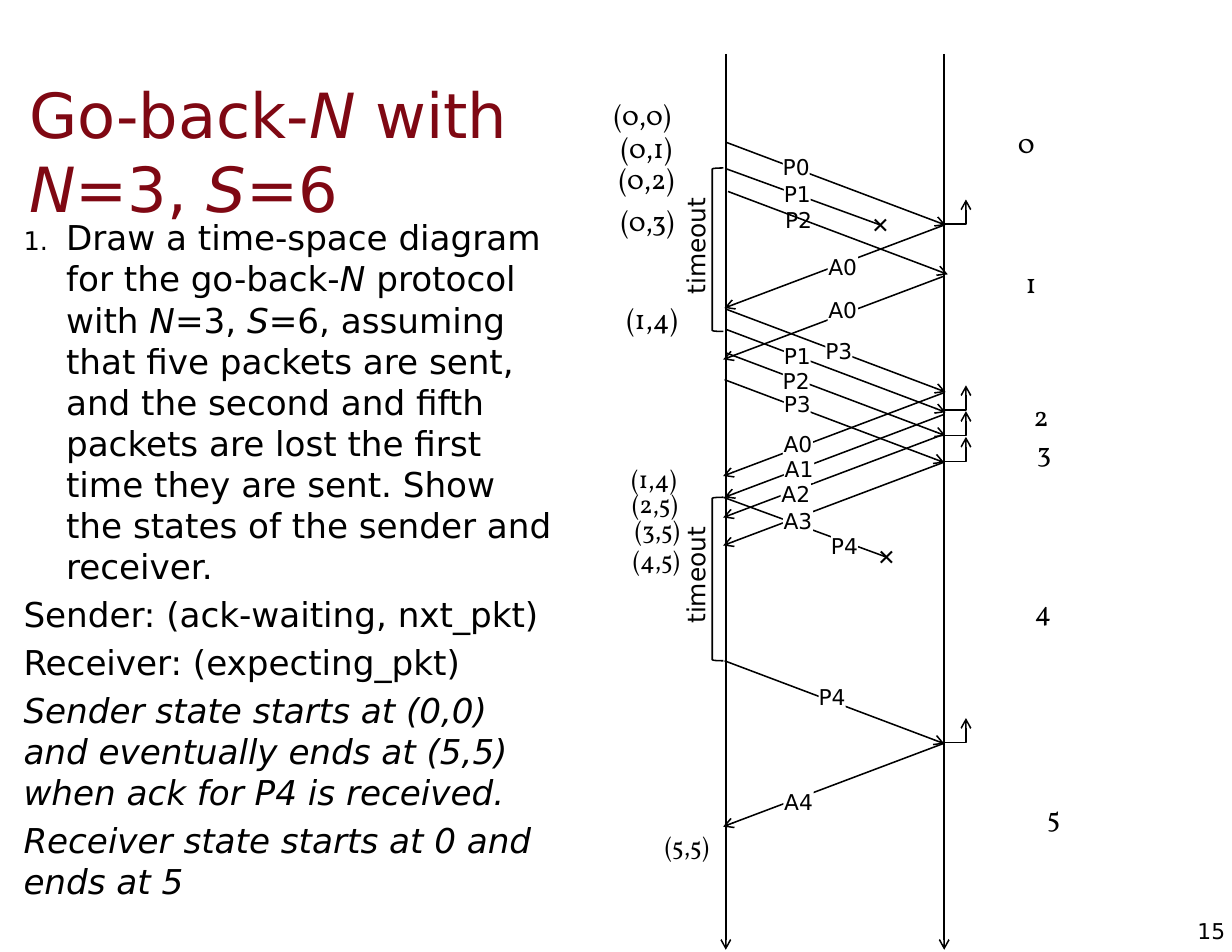
"""Build the go-back-N time-space diagram slide."""
from pptx import Presentation
from pptx.dml.color import RGBColor
from pptx.enum.shapes import MSO_CONNECTOR, MSO_SHAPE
from pptx.enum.text import MSO_ANCHOR, MSO_AUTO_SIZE, PP_ALIGN
from pptx.oxml.ns import qn
from pptx.util import Pt
from lxml import etree

LEFT, CENTER, RIGHT = PP_ALIGN.LEFT, PP_ALIGN.CENTER, PP_ALIGN.RIGHT
TOP, MIDDLE = MSO_ANCHOR.TOP, MSO_ANCHOR.MIDDLE
NO_AUTOFIT = MSO_AUTO_SIZE.NONE
STRAIGHT = MSO_CONNECTOR.STRAIGHT
RECTANGLE, LEFT_BRACKET = MSO_SHAPE.RECTANGLE, MSO_SHAPE.LEFT_BRACKET
BLACK = RGBColor(0x00, 0x00, 0x00)
WHITE = RGBColor(0xFF, 0xFF, 0xFF)
MAROON = RGBColor(0x7F, 0x08, 0x13)
SANS, SERIF, SYMBOL = "DejaVu Sans", "Vollkorn", "Arial"
SENDER_X, RECEIVER_X = 466.6, 607
TIMELINE_TOP, TIMELINE_BOTTOM = 34.6, 610.6
CROSSING, DROP = 141.3, 53.3
LABEL_HEIGHT = 17.3
LABEL_WIDTHS = {"P": 17.3, "A": 19.4}
MARK_WIDTH = 12.2
TICK_WIDTH, TICK_HEIGHT = 14, 15.8
TIMEOUT_HEIGHT = 105.1
TIMEOUT_TEXT_WIDTH, TIMEOUT_TEXT_HEIGHT = 62.6, 19.4


def write(shape, text, size=14, font=SANS, color=BLACK, align=CENTER,
          anchor=MIDDLE, inset=(0, 0), wrap=False, gap=0, numbered=0):
    """Fill a shape with lines of text; *stars* mark italics."""
    frame = shape.text_frame
    frame.auto_size = NO_AUTOFIT
    frame.word_wrap = wrap
    frame.vertical_anchor = anchor
    frame.margin_left = frame.margin_right = Pt(inset[0])
    frame.margin_top = frame.margin_bottom = Pt(inset[1])
    for index, line in enumerate(text.split("\n")):
        paragraph = frame.paragraphs[0] if index == 0 else frame.add_paragraph()
        paragraph.alignment = align
        paragraph.space_before = Pt(gap if index else 0)
        properties = paragraph._p.get_or_add_pPr()
        indent = 27.4 if index < numbered else 0
        properties.set("marL", str(Pt(indent)))
        properties.set("indent", str(Pt(-indent)))
        if index < numbered:
            bullet_color = etree.SubElement(properties, qn("a:buClr"))
            etree.SubElement(bullet_color, qn("a:srgbClr"), val=str(color))
            etree.SubElement(properties, qn("a:buSzPct"), val="75000")
            etree.SubElement(properties, qn("a:buFont"), typeface=font)
            etree.SubElement(properties, qn("a:buAutoNum"), type="arabicPeriod")
        else:
            etree.SubElement(properties, qn("a:buNone"))
        for part, words in enumerate(line.split("*")):
            if words:
                run = paragraph.add_run()
                run.text = words
                run.font.size = Pt(size)
                run.font.name = font
                run.font.color.rgb = color
                run.font.italic = part % 2 == 1


def stroke(shape, arrow=False):
    """Give a shape a thin black line without shadow."""
    shape.line.color.rgb = BLACK
    shape.line.width = Pt(1)
    properties = shape.element.spPr
    if arrow:
        etree.SubElement(properties.find(qn("a:ln")), qn("a:tailEnd"), type="arrow")
    etree.SubElement(properties, qn("a:effectLst"))


presentation = Presentation()
presentation.slide_width, presentation.slide_height = Pt(792), Pt(612)
slide = presentation.slides.add_slide(presentation.slide_layouts[1])
shapes = slide.shapes

title = shapes.title
title.left, title.top, title.width, title.height = Pt(10.8), Pt(50.4), Pt(365), Pt(92.9)
write(title, "Go-back-*N* with *N*=3, *S*=6", size=40, color=MAROON,
      align=LEFT, inset=(7.9, 4.3), wrap=True)

exercise = slide.placeholders[1]
exercise.left, exercise.top, exercise.width, exercise.height = (
    Pt(7.2), Pt(135), Pt(360.7), Pt(476.6))
write(exercise,
      "Draw a time-space diagram for the go-back-*N* protocol with *N*=3, *S*=6, "
      "assuming that five packets are sent, and the second and fifth packets are "
      "lost the first time they are sent. Show the states of the sender and receiver.\n"
      "Sender: (ack-waiting, nxt_pkt)\n"
      "Receiver: (expecting_pkt)\n"
      "*Sender state starts at (0,0) and eventually ends at (5,5) when ack for P4 "
      "is received.*\n"
      "*Receiver state starts at 0 and ends at 5*",
      size=22, align=LEFT, anchor=TOP, inset=(7.9, 4.3), wrap=True, gap=4.4, numbered=1)

page_number = shapes.add_textbox(Pt(763.2), Pt(589.7), Pt(24.5), Pt(17.3))
write(page_number, "15", align=RIGHT)

packets = [
    ("P0", 466.6, 91.4, 511.9, 107.3), ("P3", 466.6, 198.7, 539.3, 225.4),
    ("P1", 466.6, 211.7, 512.6, 229), ("P2", 466.6, 226.8, 511.9, 244.8),
    ("P3", 465.8, 244.1, 512.6, 259.9), ("P4", 465.8, 424.8, 535, 447.8),
]
struck_packets = [("P2", 468, 123.1, 513.4, 141.1)]
acks = [
    ("A0", 607, 144.7, 541.8, 171.4), ("A0", 606.2, 177.8, 541.8, 199.4),
    ("A0", 606.2, 252.7, 513, 285.1), ("A1", 607, 266.4, 513.7, 301.7),
    ("A2", 606.2, 279.4, 511.6, 317.5), ("A3", 606.2, 297.4, 513, 334.8),
    ("A4", 606.2, 478.1, 513.4, 515.5),
]
lost_packets = [("P1", 467.3, 108.7, 512.6, 124.6), ("P4", 465.1, 319.7, 542.9, 350.6)]
loss_points = [(566.1, 144.7), (570, 358.2)]

timeline_routes = [(x, TIMELINE_TOP, x, TIMELINE_BOTTOM) for x in (SENDER_X, RECEIVER_X)]
packet_routes = [(x, y, x + CROSSING, y + DROP) for _, x, y, _, _ in packets]
struck_routes = [(x, y, x + CROSSING, y + DROP) for _, x, y, _, _ in struck_packets]
ack_routes = [(x, y, x - CROSSING, y + DROP) for _, x, y, _, _ in acks]
lost_routes = [(packet[1], packet[2], *end) for packet, end in zip(lost_packets, loss_points)]

layers = [
    (timeline_routes + packet_routes + ack_routes + lost_routes,
     packets + struck_packets + acks + lost_packets),
    (struck_routes, []),
]
for routes, labelled_messages in layers:
    for route in routes:
        message_line = shapes.add_connector(STRAIGHT, *map(Pt, route))
        stroke(message_line, arrow=route not in lost_routes)
    for name, _, _, x, y in labelled_messages:
        width = LABEL_WIDTHS[name[0]]
        label = shapes.add_shape(RECTANGLE, Pt(x - width / 2), Pt(y - LABEL_HEIGHT / 2),
                                 Pt(width), Pt(LABEL_HEIGHT))
        label.shadow.inherit = False
        label.fill.solid()
        label.fill.fore_color.rgb = WHITE
        label.line.fill.background()
        write(label, name)

for x, y in loss_points:
    loss_mark = shapes.add_textbox(Pt(x - MARK_WIDTH / 2), Pt(y - LABEL_HEIGHT / 2),
                                   Pt(MARK_WIDTH), Pt(LABEL_HEIGHT))
    write(loss_mark, "✕", font=SYMBOL)

for y in (144, 263.5, 280.1, 296.6, 477.4):
    tick_x = RECEIVER_X + TICK_WIDTH
    builder = shapes.build_freeform(Pt(RECEIVER_X), Pt(y))
    builder.add_line_segments([(Pt(tick_x), Pt(y)), (Pt(tick_x), Pt(y - TICK_HEIGHT))],
                              close=False)
    delivery = builder.convert_to_shape()
    delivery.fill.background()
    stroke(delivery, arrow=True)

for timeout_start in (108, 319.7):
    timeout_span = shapes.add_shape(LEFT_BRACKET, Pt(457.9), Pt(timeout_start),
                                    Pt(7.2), Pt(TIMEOUT_HEIGHT))
    timeout_span.fill.background()
    stroke(timeout_span)
    text_top = timeout_start + (TIMEOUT_HEIGHT - TIMEOUT_TEXT_HEIGHT) / 2 - 2.5
    timeout = shapes.add_textbox(Pt(415.8), Pt(text_top),
                                 Pt(TIMEOUT_TEXT_WIDTH), Pt(TIMEOUT_TEXT_HEIGHT))
    timeout.rotation = 270
    write(timeout, "timeout", size=16)

sender_states = [
    ("(0,0)", 387.4, 59, 18), ("(0,1)", 388.1, 80.6, 18), ("(0,2)", 389.5, 100.1, 18),
    ("(0,3)", 389.5, 127.4, 18), ("(1,4)", 391.7, 190.1, 18), ("(1,4)", 391, 294.5, 16),
    ("(2,5)", 391.7, 310.3, 16), ("(3,5)", 393.1, 327.6, 16), ("(4,5)", 393.1, 346.3, 16),
    ("(5,5)", 411.8, 530.6, 16),
]
receiver_states = [
    ("0", 647.3, 77, 18), ("1", 652.3, 167, 18), ("2", 657.4, 252.7, 18),
    ("3", 659.5, 275.8, 18), ("4", 658.1, 378, 18), ("5", 666, 510.5, 18),
]
for states, width in ((sender_states, 51.1), (receiver_states, 20.2)):
    for text, x, y, size in states:
        state = shapes.add_textbox(Pt(x), Pt(y), Pt(width), Pt(size * 1.6))
        write(state, text, size=size, font=SERIF, align=RIGHT, anchor=TOP,
              inset=(7.2, 3.6), wrap=True)

presentation.save("out.pptx")
